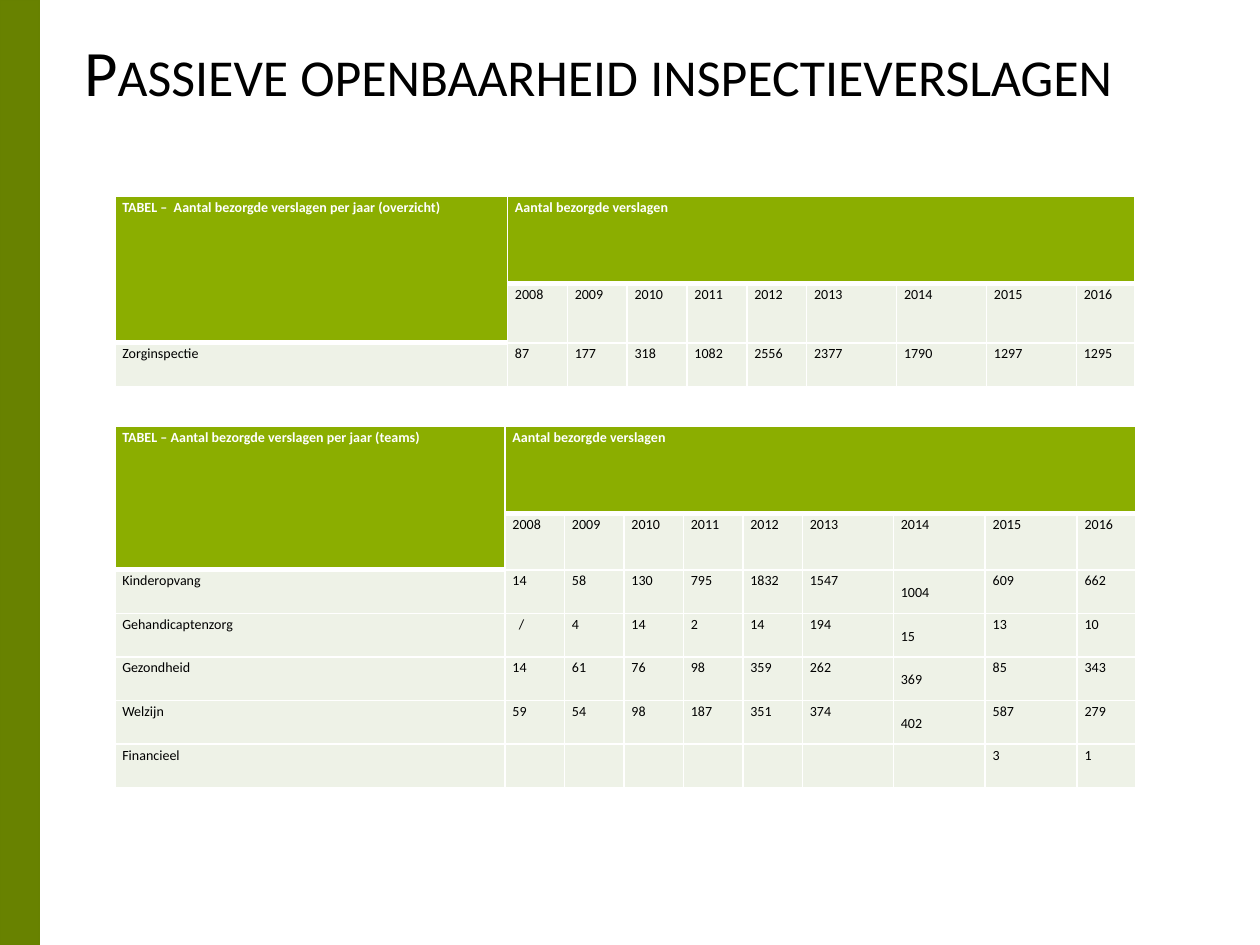
from lxml.etree import SubElement
from pptx import Presentation
from pptx.dml.color import RGBColor
from pptx.enum.shapes import MSO_SHAPE as Shape
from pptx.enum.text import MSO_ANCHOR as Anchor
from pptx.oxml.ns import qn
from pptx.util import Pt

FONT = "Calibri"
WHITE, BLACK = "FFFFFF", "000000"
GREEN, DARK_GREEN, PALE = "8BAE00", "688200", "EEF2E7"
YEARS = list(range(2008, 2017))
COL_2014 = 1 + YEARS.index(2014)

OVERVIEW = [["Zorginspectie", 87, 177, 318, 1082, 2556, 2377, 1790, 1297, 1295]]
TEAMS = [
    ["Kinderopvang", 14, 58, 130, 795, 1832, 1547, 1004, 609, 662],
    ["Gehandicaptenzorg", "/", 4, 14, 2, 14, 194, 15, 13, 10],
    ["Gezondheid", 14, 61, 76, 98, 359, 262, 369, 85, 343],
    ["Welzijn", 59, 54, 98, 187, 351, 374, 402, 587, 279],
    ["Financieel"] + [""] * 7 + [3, 1],
]


def color(hex_code):
    return RGBColor.from_string(hex_code)


def format_run(run, size, hex_code, bold=False):
    run.font.name = FONT
    run.font.size = Pt(size)
    run.font.bold = bold
    run.font.color.rgb = color(hex_code)


def draw_side_band(slide, left, top, width, height):
    band = slide.shapes.add_shape(Shape.RECTANGLE, Pt(left), Pt(top), Pt(width), Pt(height))
    band.shadow.inherit = False
    band.fill.solid()
    band.fill.fore_color.rgb = color(DARK_GREEN)
    band.line.color.rgb = color("678100")
    band.line.width = Pt(1)


def draw_title(slide, left, top, width, height):
    title = slide.shapes.add_textbox(Pt(left), Pt(top), Pt(width), Pt(height))
    frame = title.text_frame
    frame.word_wrap = True
    frame.margin_left = frame.margin_top = frame.margin_right = frame.margin_bottom = 0
    frame.text = "Passieve openbaarheid inspectieverslagen"
    heading = frame.paragraphs[0]
    heading.line_spacing = Pt(38)
    format_run(heading.runs[0], 37, BLACK)
    heading.runs[0].font._element.set("cap", "small")


def set_borders(cell, top, bottom):
    """White cell borders; top and bottom weights in points."""
    properties = cell._tc.get_or_add_tcPr()
    for side, weight in (("L", 1), ("R", 1), ("T", top), ("B", bottom)):
        border = SubElement(properties, qn(f"a:ln{side}"), w=str(Pt(weight)))
        SubElement(SubElement(border, qn("a:solidFill")), qn("a:srgbClr"), val=WHITE)


def fill_cell(cell, content, is_header, below_header):
    set_borders(cell, 3 if below_header else 1, 3 if is_header else 1)
    cell.fill.solid()
    cell.fill.fore_color.rgb = color(GREEN if is_header else PALE)
    cell.margin_left = cell.margin_right = Pt(4.3)
    cell.margin_top = cell.margin_bottom = 0
    if content == "":
        return
    cell.text_frame.text = str(content)
    entry = cell.text_frame.paragraphs[0]
    entry.line_spacing = 1.15
    format_run(entry.runs[0], 8, WHITE if is_header else BLACK, is_header)
    if content == "/":
        entry._p.get_or_add_pPr().set("marL", str(Pt(3.6)))


def draw_report_table(slide, left, top, caption, teams, col_widths, row_heights,
                      center_2014=False):
    rows = [[caption, "Aantal bezorgde verslagen"] + [""] * 8, [""] + YEARS] + teams
    table = slide.shapes.add_table(len(rows), len(col_widths), Pt(left), Pt(top),
                                   Pt(sum(col_widths)), Pt(sum(row_heights))).table
    table.first_row = table.horz_banding = False
    for column, width in zip(table.columns, col_widths):
        column.width = Pt(width)
    for table_row, height in zip(table.rows, row_heights):
        table_row.height = Pt(height)

    # Caption spans both header rows, the heading spans all years
    table.cell(0, 0).merge(table.cell(1, 0))
    table.cell(0, 1).merge(table.cell(0, len(YEARS)))

    for r, contents in enumerate(rows):
        for c, content in enumerate(contents):
            is_header = r == 0 or (r == 1 and c == 0)
            below_header = r == (2 if c == 0 else 1)
            fill_cell(table.cell(r, c), content, is_header, below_header)
            if center_2014 and r > 1 and c == COL_2014 and content != "":
                table.cell(r, c).vertical_anchor = Anchor.MIDDLE


def main():
    deck = Presentation()
    deck.slide_width, deck.slide_height = Pt(720), Pt(540)
    slide = deck.slides.add_slide(deck.slide_layouts[6])

    draw_side_band(slide, 0, 0, 22.5, 540)
    draw_title(slide, 48.2, 24.5, 638, 88)

    # Overview for the whole inspectorate
    draw_report_table(slide, 65.6, 112.4, "TABEL –  Aantal bezorgde verslagen per jaar (overzicht)",
                      OVERVIEW, [224.4] + [34.2] * 5 + [51.4] * 3 + [33.6], [49.7, 33.8, 25])

    # Breakdown by team
    draw_report_table(slide, 65.6, 243.6, "TABEL – Aantal bezorgde verslagen per jaar (teams)",
                      TEAMS, [223] + [34] * 5 + [52, 52.5, 52.5, 33.6],
                      [49.7, 32.3] + [24.9] * len(TEAMS), center_2014=True)

    deck.save("out.pptx")


if __name__ == "__main__":
    main()
